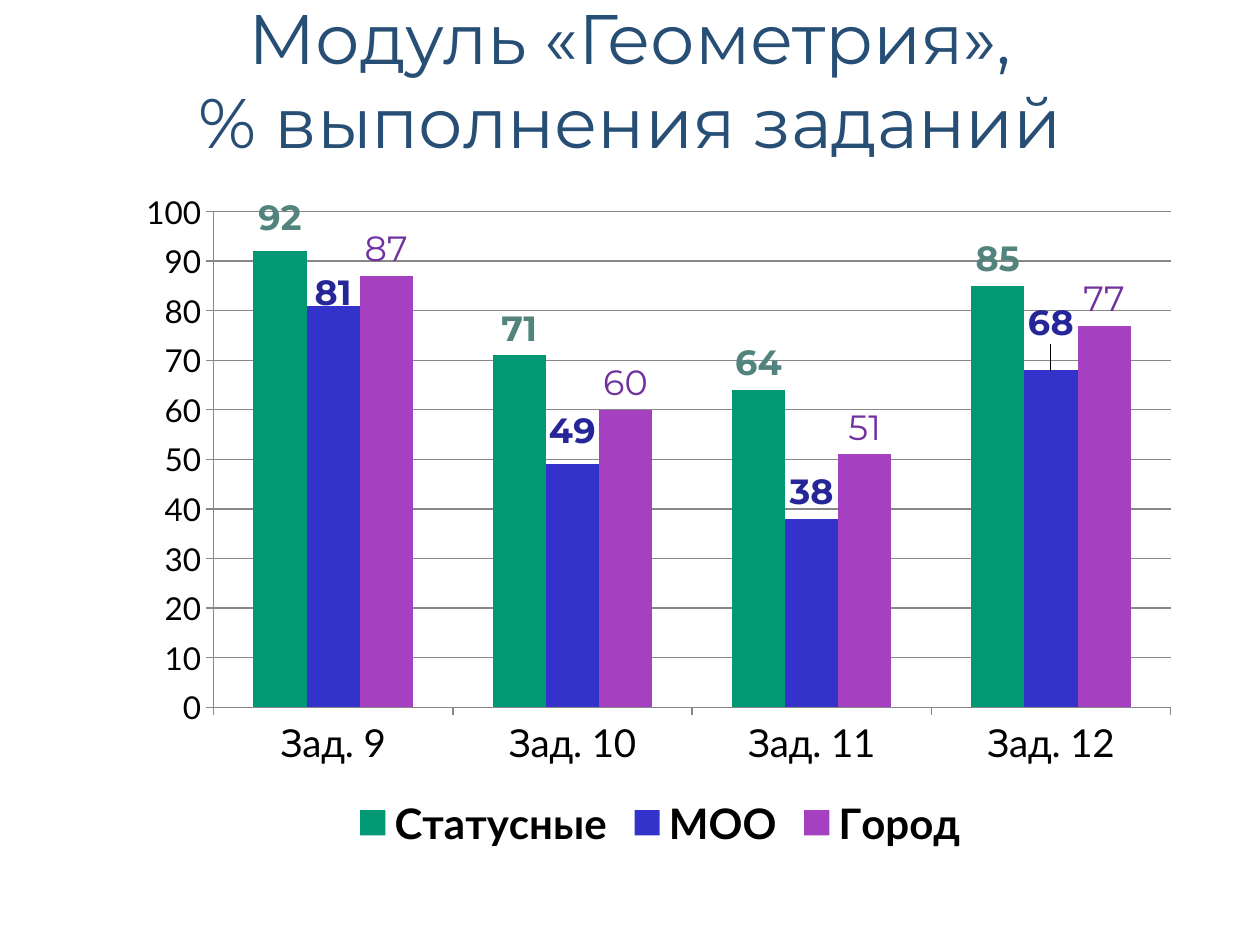
from lxml import etree
from pptx import Presentation
from pptx import util as u
from pptx.chart.data import CategoryChartData
from pptx.dml.color import RGBColor
from pptx.enum import chart as ch, text as t
from pptx.oxml.ns import qn

TITLE = "Модуль «Геометрия»,\v% выполнения заданий"
TASKS = ["Зад. 9", "Зад. 10", "Зад. 11", "Зад. 12"]
GROUPS = [
    {"name": "Статусные", "scores": [92, 71, 64, 85], "fill": "009973",
     "label": "52847D", "bold": True, "shifts": {0: (0, -0.01)}},
    {"name": "МОО", "scores": [81, 49, 38, 68], "fill": "3333CC",
     "label": "262699", "bold": True,
     "shifts": {0: (0, 0.02), 1: (0, -0.01), 2: (0, 0), 3: (0, -0.03)}},
    {"name": "Город", "scores": [87, 60, 51, 77], "fill": "A540C0",
     "label": "7030A0", "bold": False, "shifts": {}},
]
GRID = "878787"
PLOT = {"layoutTarget": "inner", "xMode": "edge", "yMode": "edge",
        "x": 0.08, "y": 0.05, "w": 0.9, "h": 0.73}


def rgb(value):
    return RGBColor.from_string(value)


def assign(target, **values):
    for key, value in values.items():
        setattr(target, key, value)


def style_font(font, size, color, name, bold=False):
    assign(font, size=u.Pt(size), name=name, bold=bold)
    font.color.rgb = rgb(color)


def style_line(line):
    line.color.rgb = rgb(GRID)
    line.width = u.Pt(0.75)


def manual_layout(values):
    layout = etree.Element(qn("c:layout"))
    manual = etree.SubElement(layout, qn("c:manualLayout"))
    for key, value in values.items():
        etree.SubElement(manual, qn(f"c:{key}")).set("val", str(value))
    return layout


def add_title(slide):
    title = slide.shapes.title
    assign(title, left=u.Pt(0), top=u.Pt(0), width=u.Pt(720), height=u.Pt(90))
    frame = title.text_frame
    assign(frame, text=TITLE, word_wrap=True, vertical_anchor=t.MSO_ANCHOR.MIDDLE)
    heading = frame.paragraphs[0]
    heading.alignment = t.PP_ALIGN.CENTER
    for run in heading.runs:
        style_font(run.font, 40, "274E75", "Montserrat")


def style_group(series, group):
    series.format.fill.solid()
    series.format.fill.fore_color.rgb = rgb(group["fill"])
    series.invert_if_negative = False
    label_style = (20, group["label"], "Montserrat", group["bold"])
    labels = series.data_labels
    assign(labels, show_value=True, position=ch.XL_LABEL_POSITION.OUTSIDE_END)
    style_font(labels.font, *label_style)
    for index, (dx, dy) in group["shifts"].items():
        label = series.points[index].data_label
        label.position = ch.XL_LABEL_POSITION.OUTSIDE_END
        style_font(label.font, *label_style)
        entry = labels._element.find(f"{qn('c:dLbl')}[{index_position(labels, index)}]")
        entry.insert(1, manual_layout({"x": dx, "y": dy}))


def index_position(labels, index):
    entries = labels._element.findall(qn("c:dLbl"))
    return 1 + [int(e.find(qn("c:idx")).get("val")) for e in entries].index(index)


def add_results(slide):
    data = CategoryChartData(number_format="0")
    data.categories = TASKS
    for group in GROUPS:
        data.add_series(group["name"], group["scores"])
    results = slide.shapes.add_chart(
        ch.XL_CHART_TYPE.COLUMN_CLUSTERED, u.Pt(73.44), u.Pt(101.52),
        u.Pt(607.68), u.Pt(388.08), data).chart
    assign(results, has_title=False, has_legend=True)
    style_font(results.font, 18, "000000", "Lato")
    assign(results.legend, position=ch.XL_LEGEND_POSITION.BOTTOM, include_in_layout=False)
    style_font(results.legend.font, 24, "000000", "Lato", True)

    tasks, percent = results.category_axis, results.value_axis
    assign(percent, minimum_scale=0, maximum_scale=100, major_unit=10,
           has_major_gridlines=True)
    style_line(percent.major_gridlines.format.line)
    for axis, size in ((tasks, 22), (percent, 18)):
        axis.major_tick_mark = ch.XL_TICK_MARK.OUTSIDE
        style_font(axis.tick_labels.font, size, "000000", "Lato")
        style_line(axis.format.line)

    plot = results.plots[0]
    assign(plot, gap_width=150, overlap=0, vary_by_categories=False)
    for series, group in zip(plot.series, GROUPS):
        style_group(series, group)

    area = results._chartSpace.chart.plotArea
    for old in area.findall(qn("c:layout")):
        area.remove(old)
    area.insert(0, manual_layout(PLOT))


def main():
    deck = Presentation()
    assign(deck, slide_width=u.Pt(720), slide_height=u.Pt(540))
    slide = deck.slides.add_slide(deck.slide_layouts[5])
    add_title(slide)
    add_results(slide)
    deck.save("out.pptx")


if __name__ == "__main__":
    main()
